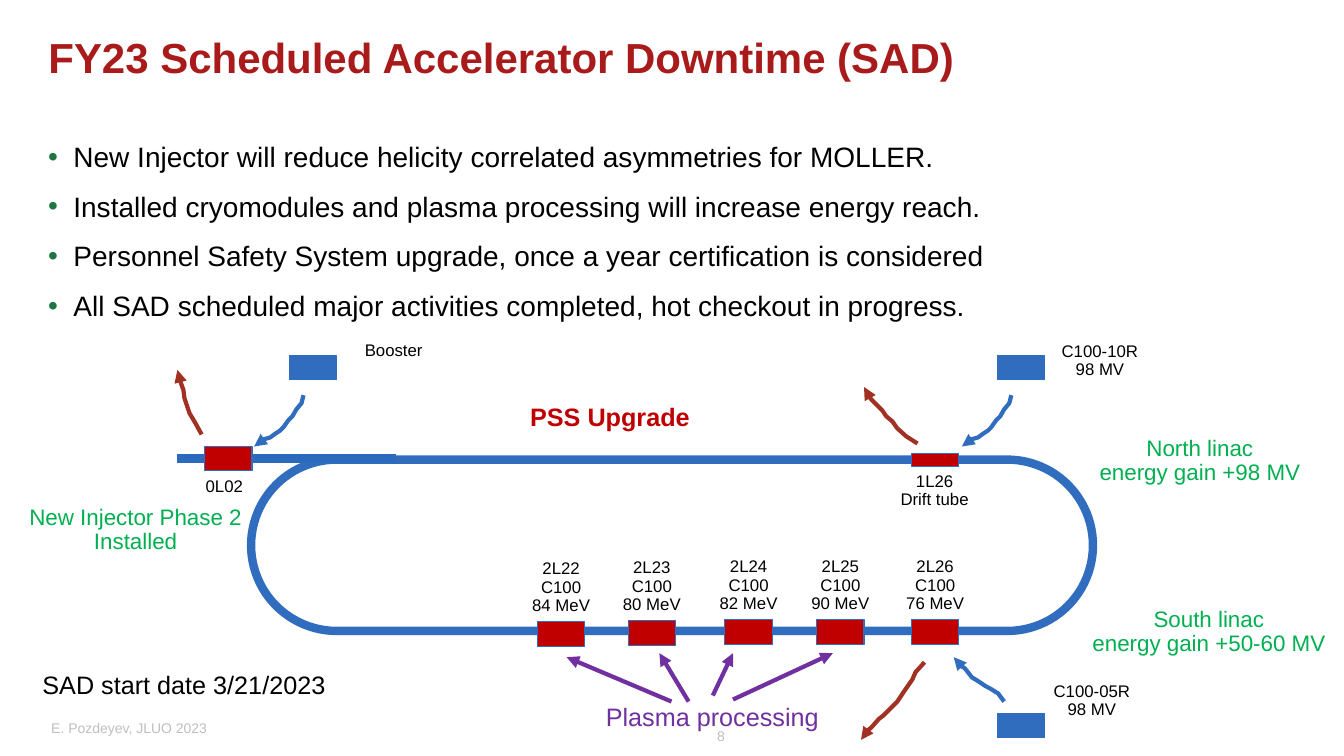
from pptx import Presentation
from pptx.dml.color import RGBColor
from pptx.enum.shapes import MSO_CONNECTOR as CONN, MSO_SHAPE as SHAPE
from pptx.enum.text import MSO_ANCHOR as ANCHOR, PP_ALIGN as ALIGN
from pptx.oxml.ns import qn
from pptx.util import Inches, Pt
from lxml.etree import SubElement

BLUE, BEAM, RED, RUST = "306DBE", "2B6ABD", "C00000", "A03123"
PURPLE, GREEN, GRAY, BLACK = "7030A0", "00B050", "BFBFBF", "000000"
MODULE_W, MODULE_H = 0.47, 0.24

TITLE = "FY23 Scheduled Accelerator Downtime (SAD)"
POINTS = [
    "New Injector will reduce helicity correlated asymmetries for MOLLER.",
    "Installed cryomodules and plasma processing will increase energy reach.",
    "Personnel Safety System upgrade, once a year certification is considered",
    "All SAD scheduled major activities completed, hot checkout in progress.",
]

# South linac cryomodules: name, energy, left, top
CRYOMODULES = [
    ("2L22", "84 MeV", 5.33, 6.17),
    ("2L23", "80 MeV", 6.23, 6.16),
    ("2L24", "82 MeV", 7.19, 6.15),
    ("2L25", "90 MeV", 8.10, 6.15),
    ("2L26", "76 MeV", 9.04, 6.15),
]
# Other modules: left, top, height, fill
OTHER_MODULES = [
    (9.04, 4.50, 0.13, RED),
    (2.03, 4.43, MODULE_H, RED),
    (9.89, 7.08, MODULE_H, BLUE),
    (9.89, 3.53, MODULE_H, BLUE),
    (2.87, 3.53, MODULE_H, BLUE),
]
# Labels: lines, box, size, colour, bold
LABELS = [
    (["C100-10R", "98 MV"], (10.43, 3.35, 0.96, 0.46), 12, BLACK, False),
    (["C100-05R", "98 MV"], (10.35, 6.73, 0.96, 0.46), 12, BLACK, False),
    (["1L26", "Drift tube"], (8.83, 4.64, 0.88, 0.46), 12, BLACK, False),
    (["Booster"], (3.49, 3.34, 0.83, 0.28), 12, BLACK, False),
    (["0L02"], (1.94, 4.69, 0.57, 0.28), 12, BLACK, False),
    (["Plasma processing"], (5.9, 6.94, 2.33, 0.37), 18, PURPLE, False),
    (["North linac", "energy gain +98 MV"], (10.79, 4.29, 2.22, 0.59), 16, GREEN, False),
    (["South linac", "energy gain +50-60 MV"], (10.72, 5.98, 2.54, 0.59), 16, GREEN, False),
    (["New Injector Phase 2", "Installed"], (0.18, 4.97, 2.33, 0.59), 16, GREEN, False),
    (["SAD start date 3/21/2023"], (0.31, 6.62, 3.03, 0.37), 18, BLACK, False),
    (["PSS Upgrade"], (5.15, 3.97, 1.8, 0.37), 18, RED, True),
]
PLASMA_ARROWS = [
    ((7.27, 6.94), (8.26, 6.48)),
    ((7.07, 6.90), (7.27, 6.48)),
    ((6.83, 6.96), (6.54, 6.48)),
    ((6.66, 6.96), (5.62, 6.52)),
]
# Path of a module going in on the north side
INSTALL = [(10.03, 3.92), (10.01, 4), (9.96, 4.06), (9.92, 4.13), (9.88, 4.17),
           (9.83, 4.24), (9.8, 4.27), (9.74, 4.31), (9.7, 4.34), (9.63, 4.36),
           (9.58, 4.4), (9.54, 4.43)]
BOOSTER_SHIFT = -7.02
# Swap arrows: colour, points
SWAP_ARROWS = [
    (BLUE, INSTALL),
    (BLUE, [(x + BOOSTER_SHIFT, y) for x, y in INSTALL]),
    (BLUE, [(9.96, 6.96), (9.9, 6.88), (9.82, 6.83), (9.78, 6.81), (9.69, 6.75),
            (9.64, 6.72), (9.57, 6.63), (9.52, 6.6), (9.49, 6.57), (9.46, 6.52)]),
    (RUST, [(9.1, 4.4), (8.99, 4.33), (8.9, 4.25), (8.85, 4.18), (8.79, 4.13),
            (8.75, 4.07), (8.69, 4.01), (8.64, 3.96), (8.61, 3.92), (8.6, 3.87),
            (8.57, 3.84)]),
    (RUST, [(9.17, 6.57), (9.08, 6.67), (9.05, 6.74), (8.96, 6.87), (8.9, 6.96),
            (8.81, 7.05), (8.76, 7.1), (8.72, 7.13), (8.64, 7.22), (8.6, 7.25),
            (8.58, 7.3), (8.54, 7.34)]),
    (RUST, [(2, 4.31), (1.94, 4.2), (1.88, 4.1), (1.83, 3.95), (1.82, 3.87),
            (1.77, 3.73), (1.76, 3.67)]),
]

prs = Presentation()
prs.slide_width, prs.slide_height = Inches(13.33), Inches(7.5)
slide = prs.slides.add_slide(prs.slide_layouts[5])
shapes = slide.shapes


def rgb(color):
    return RGBColor.from_string(color)


def inches(values):
    return [Inches(v) for v in values]


def write(paragraph, text, size, color, bold=False, spacing=0.9):
    paragraph.line_spacing = spacing
    run = paragraph.add_run()
    run.text = text
    font = run.font
    font.name, font.size, font.bold = "Arial", Pt(size), bold
    font.color.rgb = rgb(color)


def add_text(lines, box, size, color, bold=False, align=ALIGN.CENTER, wrap=False):
    frame = shapes.add_textbox(*inches(box)).text_frame
    frame.word_wrap = wrap
    for i, line in enumerate(lines):
        paragraph = frame.add_paragraph() if i else frame.paragraphs[0]
        paragraph.alignment = align
        write(paragraph, line, size, color, bold)
    return frame


def add_box(preset, box, fill, line, width):
    shape = shapes.add_shape(preset, *inches(box))
    shape.shadow.inherit = False
    shape.fill.solid()
    shape.fill.fore_color.rgb = rgb(fill)
    shape.line.color.rgb = rgb(line)
    shape.line.width = Pt(width)
    return shape


def style_line(line, color, width, arrow=True):
    line.color.rgb = rgb(color)
    line.width = Pt(width)
    if arrow:
        SubElement(line._get_or_add_ln(), qn("a:tailEnd"), type="triangle")


def add_line(start, end, color, width, arrow=True):
    connector = shapes.add_connector(CONN.STRAIGHT, *inches(start + end))
    style_line(connector.line, color, width, arrow)
    SubElement(connector._element.spPr, qn("a:effectLst"))


def add_curve(points, color):
    start, *rest = [inches(point) for point in points]
    builder = shapes.build_freeform(*start)
    builder.add_line_segments(rest, close=False)
    curve = builder.convert_to_shape()
    curve.shadow.inherit = False
    curve.fill.background()
    style_line(curve.line, color, 3)


# Title
title = shapes.title
title.left, title.top, title.width, title.height = inches((0.38, 0.34, 12.49, 0.53))
title.text_frame.vertical_anchor = ANCHOR.TOP
heading = title.text_frame.paragraphs[0]
heading.alignment = ALIGN.LEFT
write(heading, TITLE, 30, "A91B1B", True, 0.85)

# Bullets
body = add_text(POINTS, (0.38, 1.37, 12.43, 1.9), 20, BLACK, align=ALIGN.LEFT, wrap=True)
for i, paragraph in enumerate(body.paragraphs):
    props = paragraph._p.get_or_add_pPr()
    props.set("marL", str(Inches(0.25)))
    props.set("indent", str(-Inches(0.25)))
    paragraph.space_before = Pt(14 if i else 0)
    SubElement(SubElement(props, qn("a:buClr")), qn("a:srgbClr"), val="1E7640")
    SubElement(props, qn("a:buFont"), typeface="Arial")
    SubElement(props, qn("a:buChar"), char="•")

# Racetrack and injector beam line
track = add_box(SHAPE.ROUNDED_RECTANGLE, (2.49, 4.56, 8.35, 1.7), "FFFFFF", BLUE, 6)
track.adjustments[0] = 0.5
add_line((3.93, 4.55), (1.76, 4.55), BEAM, 6, arrow=False)

# Modules
for name, energy, left, top in CRYOMODULES:
    add_box(SHAPE.RECTANGLE, (left, top, MODULE_W, MODULE_H), RED, BLUE, 0.75)
    label_box = (left + MODULE_W / 2 - 0.39, top - 0.66, 0.78, 0.65)
    add_text([name, "C100", energy], label_box, 12, BLACK)
for left, top, height, fill in OTHER_MODULES:
    add_box(SHAPE.RECTANGLE, (left, top, MODULE_W, height), fill, BLUE, 0.75)

# Labels and arrows
for label in LABELS:
    add_text(*label)
for start, end in PLASMA_ARROWS:
    add_line(start, end, PURPLE, 3)
for color, points in SWAP_ARROWS:
    add_curve(points, color)

# Footer and slide number
footer = add_text(["E. Pozdeyev, JLUO 2023"], (0.41, 7.12, 4.22, 0.2), 10, GRAY,
                  align=ALIGN.LEFT, wrap=True)
footer.vertical_anchor = ANCHOR.MIDDLE
footer.paragraphs[0].line_spacing = 1.0
number = add_text(["8"], (6.88, 7.24, 0.31, 0.17), 10, GRAY, align=ALIGN.RIGHT, wrap=True)
number.margin_left = number.margin_right = number.margin_top = number.margin_bottom = 0

prs.save("out.pptx")
